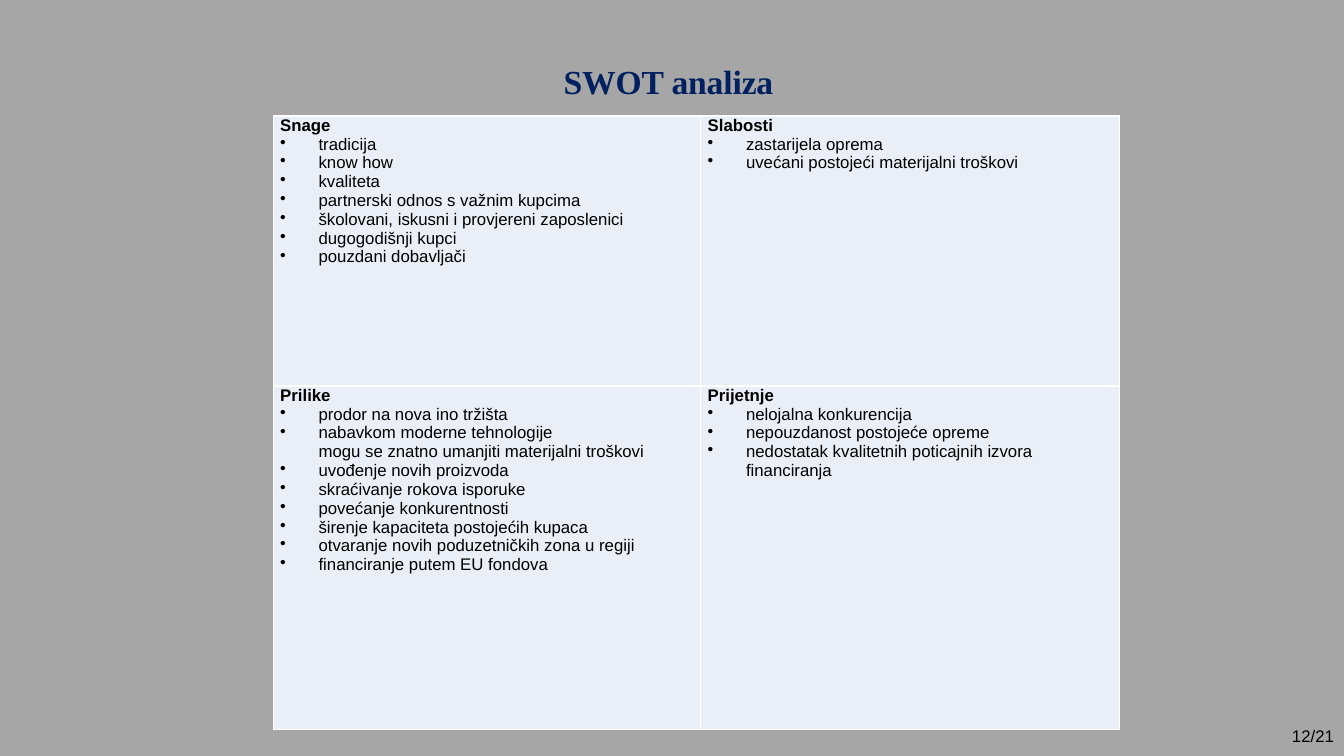
from pptx import Presentation
from pptx.dml.color import RGBColor
from pptx.enum.shapes import MSO_SHAPE
from pptx.enum.text import MSO_ANCHOR, MSO_AUTO_SIZE, PP_ALIGN
from pptx.oxml import parse_xml
from pptx.oxml.ns import nsdecls
from pptx.util import Inches, Pt

LEFT, RIGHT = PP_ALIGN.LEFT, PP_ALIGN.RIGHT
TOP, MIDDLE = MSO_ANCHOR.TOP, MSO_ANCHOR.MIDDLE
RECT, NO_FIT = MSO_SHAPE.RECTANGLE, MSO_AUTO_SIZE.NONE

COLORS = {"back": "A6A6A6", "title": "002060", "text": "000000",
          "cell": "EAEFF7", "border": "FFFFFF"}
TITLE = {"name": "Times New Roman", "size": Pt(24), "bold": True}
HEAD = {"name": "Arial", "size": Pt(12), "bold": True}
BODY = {**HEAD, "bold": False}

# Each part: heading, then items; "+" continues the item above
SWOT = [
    [("Snage", ["tradicija", "know how", "kvaliteta",
                "partnerski odnos s važnim kupcima",
                "školovani, iskusni i provjereni zaposlenici",
                "dugogodišnji kupci", "pouzdani dobavljači"]),
     ("Slabosti", ["zastarijela oprema",
                   "uvećani postojeći materijalni troškovi"])],
    [("Prilike", ["prodor na nova ino tržišta",
                  "nabavkom moderne tehnologije",
                  "+mogu se znatno umanjiti materijalni troškovi",
                  "uvođenje novih proizvoda",
                  "skraćivanje rokova isporuke",
                  "povećanje konkurentnosti",
                  "širenje kapaciteta postojećih kupaca",
                  "otvaranje novih poduzetničkih zona u regiji",
                  "financiranje putem EU fondova"]),
     ("Prijetnje", ["nelojalna konkurencija",
                    "nepouzdanost postojeće opreme",
                    "nedostatak kvalitetnih poticajnih izvora",
                    "+financiranja"])],
]


def paint(fill, color):
    fill.solid()
    fill.fore_color.rgb = RGBColor.from_string(COLORS[color])


def write(para, text, style, color="text", align=LEFT):
    run = para.add_run()
    run.text = text
    para.alignment = align
    for key, value in style.items():
        setattr(run.font, key, value)
    run.font.color.rgb = RGBColor.from_string(COLORS[color])
    return run


# Slide and background
deck = Presentation()
deck.slide_width, deck.slide_height = Inches(13.33), Inches(7.5)
slide = deck.slides.add_slide(deck.slide_layouts[5])
paint(slide.background.fill, "back")

# Title, indented from the left edge of its box
title = slide.shapes.title
title.left, title.top = Inches(1.81), Inches(0.55)
title.width, title.height = Inches(9.84), Inches(0.5)
frame = title.text_frame
frame.auto_size, frame.vertical_anchor = NO_FIT, TOP
para = frame.paragraphs[0]
run = write(para, "SWOT analiza", TITLE, "title")
run.font._element.set("spc", "-10")
para._p.get_or_add_pPr().set("marL", str(Inches(3.68)))

# SWOT table
table = slide.shapes.add_table(2, 2, Inches(2.71), Inches(1.15),
                               Inches(8.39), Inches(6.09)).table
for col, width in zip(table.columns, (4.24, 4.15)):
    col.width = Inches(width)
for row, height in zip(table.rows, (2.68, 3.41)):
    row.height = Inches(height)

for row, parts in zip(table.rows, SWOT):
    for cell, (head, items) in zip(row.cells, parts):
        # Borders, fill and margins
        props = cell._tc.get_or_add_tcPr()
        for side in ("lnL", "lnR", "lnT", "lnB"):
            props.append(parse_xml(
                f'<a:{side} {nsdecls("a")} w="{Pt(1)}"><a:solidFill>'
                f'<a:srgbClr val="{COLORS["border"]}"/>'
                f'</a:solidFill></a:{side}>'))
        paint(cell.fill, "cell")
        cell.margin_left = cell.margin_right = Inches(0.07)
        cell.margin_top = cell.margin_bottom = 0

        # Heading and bullet list
        frame = cell.text_frame
        write(frame.paragraphs[0], head, HEAD)
        for item in items:
            para = frame.add_paragraph()
            write(para, item.removeprefix("+"), BODY)
            props = para._p.get_or_add_pPr()
            props.set("marL", str(Inches(0.38)))
            if not item.startswith("+"):
                props.set("indent", str(Inches(-0.38)))
                props.append(parse_xml(
                    f'<a:buChar {nsdecls("a")} char="•"/>'))

# Page number
page = slide.shapes.add_shape(RECT, Inches(12.7), Inches(7.1),
                              Inches(0.63), Inches(0.4))
page.shadow.inherit = False
paint(page.fill, "back")
page.line.fill.background()
frame = page.text_frame
frame.vertical_anchor, frame.word_wrap = MIDDLE, False
write(frame.paragraphs[0], "12/21", BODY, align=RIGHT)

deck.save("out.pptx")
